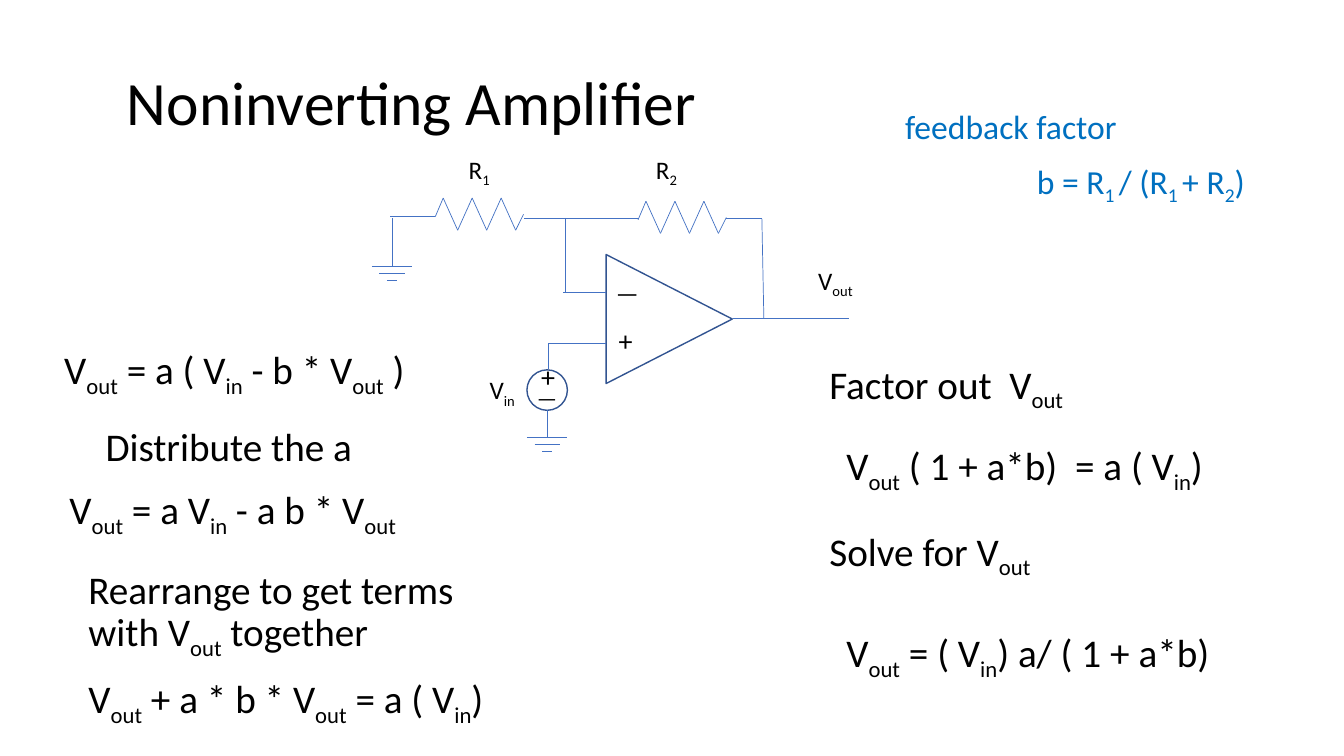
from dataclasses import dataclass
from itertools import pairwise

from lxml import etree
from pptx import Presentation
from pptx.dml.color import RGBColor
from pptx.enum.shapes import MSO_CONNECTOR as Connector, MSO_SHAPE as Shape
from pptx.enum.text import MSO_ANCHOR as Anchor
from pptx.oxml.ns import qn
from pptx.util import Cm, Pt


@dataclass(frozen=True)
class Theme:
    font: str = "Calibri"
    ink: RGBColor = RGBColor(0, 0, 0)
    accent: RGBColor = RGBColor(0x00, 0x70, 0xC0)
    wire: RGBColor = RGBColor(0x44, 0x72, 0xC4)
    outline: RGBColor = RGBColor(0x32, 0x54, 0x91)
    title_size: int = 44
    equation_size: int = 28
    feedback_size: int = 24
    plus_size: int = 20
    label_size: int = 18
    small_size: int = 16


THEME = Theme()


# Shared helpers: all lengths are centimetres

def write_paragraph(paragraph, text, size, color, spacing=None, before=None):
    """Write text in which every second part between bars is a subscript."""
    paragraph.line_spacing = spacing
    paragraph.space_before = None if before is None else Pt(before)
    for index, part in enumerate(text.split("|")):
        if not part:
            continue
        run = paragraph.add_run()
        run.text = part
        run.font.name = THEME.font
        run.font.size = Pt(size)
        run.font.color.rgb = color
        if index % 2:
            run.font._element.set("baseline", "-25000")


def add_text_box(slide, box):
    text_frame = slide.shapes.add_textbox(*map(Cm, box)).text_frame
    text_frame.word_wrap = True
    return text_frame


def add_polyline(slide, origin, points):
    left, top = origin
    for (x1, y1), (x2, y2) in pairwise(points):
        ends = map(Cm, (left + x1, top + y1, left + x2, top + y2))
        connector = slide.shapes.add_connector(Connector.STRAIGHT, *ends)
        connector.line.color.rgb = THEME.wire
        connector.line.width = Pt(0.5)
        etree.SubElement(connector._element.spPr, qn("a:effectLst"))


def add_outline(slide, kind, box, rotation=0):
    shape = slide.shapes.add_shape(kind, *map(Cm, box))
    shape.shadow.inherit = False
    shape.fill.background()
    shape.line.color.rgb = THEME.outline
    shape.line.width = Pt(1)
    shape.rotation = rotation


# Circuit parts

def add_resistor(slide, origin):
    lead, step, peak, trough = 0.2, 0.365, -0.47, 0.34
    zigzag = [(lead + i * step, trough if i % 2 else peak) for i in range(6)]
    end = (2 * lead + 5 * step, -0.06)
    add_polyline(slide, origin, [(0, 0), *zigzag, end])


def add_ground(slide, origin):
    for level, half in enumerate((0.51, 0.32, 0.13)):
        y = level * 0.18
        add_polyline(slide, origin, [(-half, y), (half, y)])


def add_circuit(slide, origin):
    left, top = origin

    def place(x, y):
        return left + x, top + y

    # Amplifier and source
    add_outline(slide, Shape.ISOSCELES_TRIANGLE, (*place(5.87, 2.69), 3.25, 3.18), 90)
    add_outline(slide, Shape.OVAL, (*place(3.91, 5.56), 1.02, 1.02))

    # Resistors and grounds
    for x, y in ((1.6, 1.7), (6.71, 1.78)):
        add_resistor(slide, place(x, y))
    for x, y in ((0.51, 2.95), (4.42, 7.26)):
        add_ground(slide, place(x, y))

    # Wires
    wires = (
        [(0.51, 2.95), (0.51, 1.73)],
        [(0.46, 1.7), (1.6, 1.7)],
        [(3.84, 1.73), (6.73, 1.73)],
        [(4.88, 1.73), (4.88, 3.61)],
        [(4.83, 3.61), (5.9, 3.61)],
        [(8.92, 1.75), (9.83, 1.75), (9.88, 4.27)],
        [(9.1, 4.27), (12.02, 4.27)],
        [(4.45, 5.54), (4.45, 4.88), (5.9, 4.88)],
        [(4.42, 6.58), (4.42, 7.26)],
    )
    for points in wires:
        add_polyline(slide, origin, points)

    # Signs and names
    labels = (
        ("R|1|", 2.19, 0, 1.45, THEME.label_size),
        ("R|2|", 6.91, 0, 1.45, THEME.label_size),
        ("V|in|", 2.72, 5.56, 1.45, THEME.label_size),
        ("V|out|", 11, 2.79, 1.45, THEME.label_size),
        ("—", 5.9, 3.1, 0.86, THEME.label_size),
        ("+", 5.97, 4.27, 0.86, THEME.plus_size),
        ("+", 4.02, 5.18, 0.86, THEME.plus_size),
        ("—", 3.91, 5.79, 0.86, THEME.small_size),
    )
    for text, x, y, width, size in labels:
        text_frame = add_text_box(slide, (*place(x, y), width, 1.02))
        write_paragraph(text_frame.paragraphs[0], text, size, THEME.ink)


# Text regions

def add_title(slide, box):
    text_frame = add_text_box(slide, box)
    text_frame.vertical_anchor = Anchor.MIDDLE
    write_paragraph(text_frame.paragraphs[0], "Noninverting Amplifier",
                    THEME.title_size, THEME.ink, 0.9)


def add_feedback_factor(slide, box):
    text_frame = add_text_box(slide, box)
    heading, formula = text_frame.paragraphs[0], text_frame.add_paragraph()
    for paragraph, text in ((heading, "feedback factor"),
                            (formula, "b = R|1 |/ (R|1 |+ R|2|)")):
        write_paragraph(paragraph, text, THEME.feedback_size, THEME.accent, 0.9, 10)
    formula._p.get_or_add_pPr().set("marL", str(Cm(3.32)))


def add_steps(slide, box, steps):
    left, top, width = box
    for text, x, y, height, spacing in steps:
        text_frame = add_text_box(slide, (left + x, top + y, width - x, height))
        write_paragraph(text_frame.paragraphs[0], text, THEME.equation_size,
                        THEME.ink, spacing, 10)


# Steps: text, offset from the column, height, line spacing
LEFT_STEPS = (
    ("V|out| = a ( V|in| - b * V|out| )", 0, 0, 1.9, 0.9),
    ("Distribute the a", 1.04, 2.05, 1.52, 0.9),
    ("V|out| = a V|in| - a b * V|out|", 0.13, 3.53, 1.9, 0.9),
    ("Rearrange to get terms with V|out| together", 0.61, 5.76, 2.31, 0.8),
    ("V|out| + a * b * V|out| = a ( V|in|)", 0.61, 8.3, 1.75, 0.9),
)
RIGHT_STEPS = (
    ("Factor out  V|out|", 0, 0, 1.27, 0.8),
    ("V|out| ( 1 + a*b)  = a ( V|in|)", 0.43, 1.95, 1.57, 0.9),
    ("Solve for V|out|", 0, 4.21, 1.27, 0.8),
    ("V|out| = ( V|in|) a/ ( 1 + a*b)", 0.43, 6.65, 1.75, 0.9),
)


def main():
    presentation = Presentation()
    presentation.slide_width, presentation.slide_height = Cm(33.87), Cm(19.05)
    slide = presentation.slides.add_slide(presentation.slide_layouts[6])
    add_circuit(slide, (9.37, 3.76))
    add_title(slide, (2.95, 0.81, 29.21, 3.68))
    add_steps(slide, (1.37, 8.59, 11.99), LEFT_STEPS)
    add_steps(slide, (20.65, 9.07, 12.42), RIGHT_STEPS)
    add_feedback_factor(slide, (22.56, 2.67, 9.65, 2.87))
    presentation.save("out.pptx")


if __name__ == "__main__":
    main()
